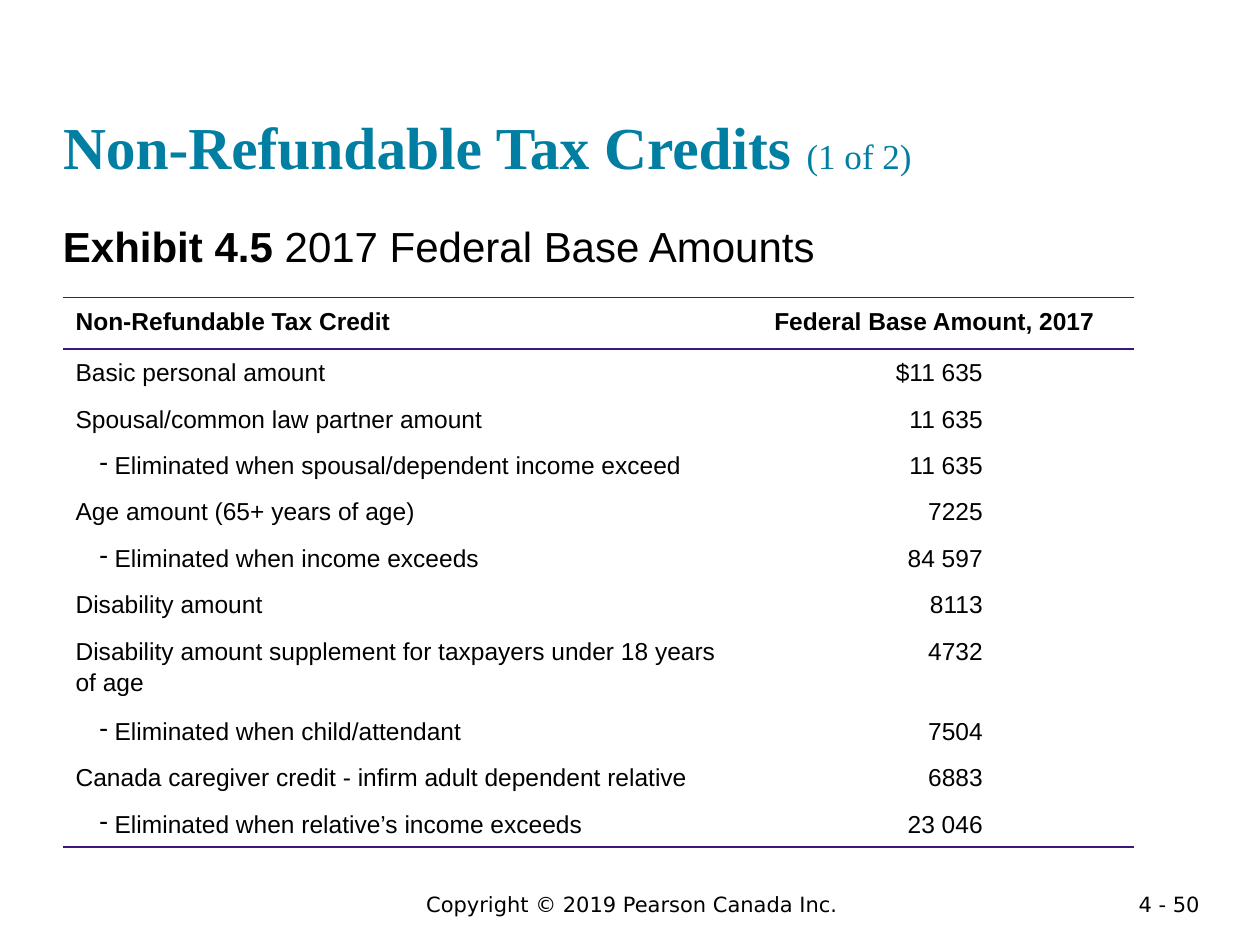
from lxml import etree
from pptx import Presentation
from pptx.dml.color import RGBColor
from pptx.enum.text import MSO_ANCHOR, PP_ALIGN
from pptx.oxml.ns import qn
from pptx.util import Inches, Pt

LEFT, MID, RIGHT = PP_ALIGN.LEFT, PP_ALIGN.CENTER, PP_ALIGN.RIGHT
TOP, BOTTOM = MSO_ANCHOR.TOP, MSO_ANCHOR.BOTTOM
TEAL = RGBColor(0x00, 0x7F, 0xA3)
BLACK = RGBColor(0, 0, 0)
PURPLE = RGBColor(0x3C, 0x15, 0x81)
PLAIN = "{2D5ABB26-0587-4C30-8999-92F81FD0307C}"

HEAD = ("Non-Refundable Tax Credit", "Federal Base Amount, 2017")
ROWS = [
    ("Basic personal amount", "$11 635", False),
    ("Spousal/common law partner amount", "11 635", False),
    ("Eliminated when spousal/dependent income exceed", "11 635", True),
    ("Age amount (65+ years of age)", "7225", False),
    ("Eliminated when income exceeds", "84 597", True),
    ("Disability amount", "8113", False),
    ("Disability amount supplement for taxpayers under 18 years of age", "4732", False),
    ("Eliminated when child/attendant", "7504", True),
    ("Canada caregiver credit - infirm adult dependent relative", "6883", False),
    ("Eliminated when relative’s income exceeds", "23 046", True),
]


def style(item, values):
    for name, value in values.items():
        setattr(item, name, value)


def write(para, text, size, face="Arial", color=BLACK, bold=False):
    run = para.add_run()
    run.text = text
    style(run.font, {"size": Pt(size), "name": face, "bold": bold})
    run.font.color.rgb = color


def place(shape, box):
    names = ("left", "top", "width", "height")
    style(shape, dict(zip(names, map(Inches, box))))


def frame(shape, anchor):
    style(shape.text_frame, {
        "word_wrap": True, "vertical_anchor": anchor, "margin_left": 0,
        "margin_right": 0, "margin_top": 0, "margin_bottom": 0,
    })
    return shape.text_frame.paragraphs[0]


def add_title(slide, box):
    title = slide.shapes.title
    place(title, box)
    para = frame(title, BOTTOM)
    para.alignment = LEFT
    write(para, "Non-Refundable Tax Credits ", 34, "Times New Roman", TEAL, True)
    write(para, "(1 of 2)", 20, "Times New Roman", TEAL)


def add_label(slide, box):
    label = slide.shapes.add_textbox(*map(Inches, box))
    para = frame(label, TOP)
    write(para, "Exhibit 4.5 ", 24, bold=True)
    write(para, "2017 Federal Base Amounts", 24)


def add_note(slide, box, text, align):
    note = slide.shapes.add_textbox(*map(Inches, box))
    note.text_frame.word_wrap = True
    para = note.text_frame.paragraphs[0]
    para.alignment = align
    write(para, text, 12, "DejaVu Sans")


def add_dash(para):
    props = para._p.get_or_add_pPr()
    props.set("marL", str(Inches(0.31)))
    props.set("indent", str(Inches(-0.12)))
    etree.SubElement(props, qn("a:buChar")).set("char", "-")


def add_rules(cell, sides):
    props = cell._tc.get_or_add_tcPr()
    for spot, side in enumerate(sides):
        line = etree.Element(qn("a:ln" + side), w=str(Pt(1)))
        fill = etree.SubElement(line, qn("a:solidFill"))
        etree.SubElement(fill, qn("a:srgbClr")).set("val", str(PURPLE))
        props.insert(spot, line)


def fill_cell(cell, text, align=LEFT, bold=False, dash=False, sides=""):
    cell.fill.background()
    para = cell.text_frame.paragraphs[0]
    style(para, {"alignment": align, "line_spacing": 1.15})
    if dash:
        add_dash(para)
    write(para, text, 14, bold=bold)
    add_rules(cell, sides)


def add_grid(slide, box):
    shape = slide.shapes.add_table(len(ROWS) + 1, 2, *map(Inches, box))
    grid = shape.table
    style(grid, {"first_row": False, "horz_banding": False})
    grid._tbl.tblPr.find(qn("a:tableStyleId")).text = PLAIN
    for col, width in zip(grid.columns, (5.33, box[2] - 5.33)):
        col.width = Inches(width)
    for row in grid.rows:
        row.height = Inches(0.35)
    grid.rows[0].height = Inches(0.41)
    for col, (text, align) in enumerate(zip(HEAD, (LEFT, MID))):
        fill_cell(grid.cell(0, col), text, align, bold=True, sides="TB")
    for row, (name, value, dash) in enumerate(ROWS, 1):
        sides = "B" if row == len(ROWS) else ""
        fill_cell(grid.cell(row, 0), name, dash=dash, sides=sides)
        cell = grid.cell(row, 1)
        cell.margin_right = Inches(1.2)
        fill_cell(cell, value, RIGHT, sides=sides)


def main():
    deck = Presentation()
    style(deck, {"slide_width": Inches(10), "slide_height": Inches(7.5)})
    slide = deck.slides.add_slide(deck.slide_layouts[5])
    add_note(slide, (1.64, 7.03, 6.75, 0.3), "Copyright © 2019 Pearson Canada Inc.", MID)
    add_note(slide, (8.62, 7.03, 1, 0.22), "4 - 50", RIGHT)
    add_title(slide, (0.5, 0.24, 9, 1.2))
    add_label(slide, (0.5, 1.75, 9, 0.5))
    add_grid(slide, (0.5, 2.36, 8.5, 4.36))
    deck.save("out.pptx")


if __name__ == "__main__":
    main()
